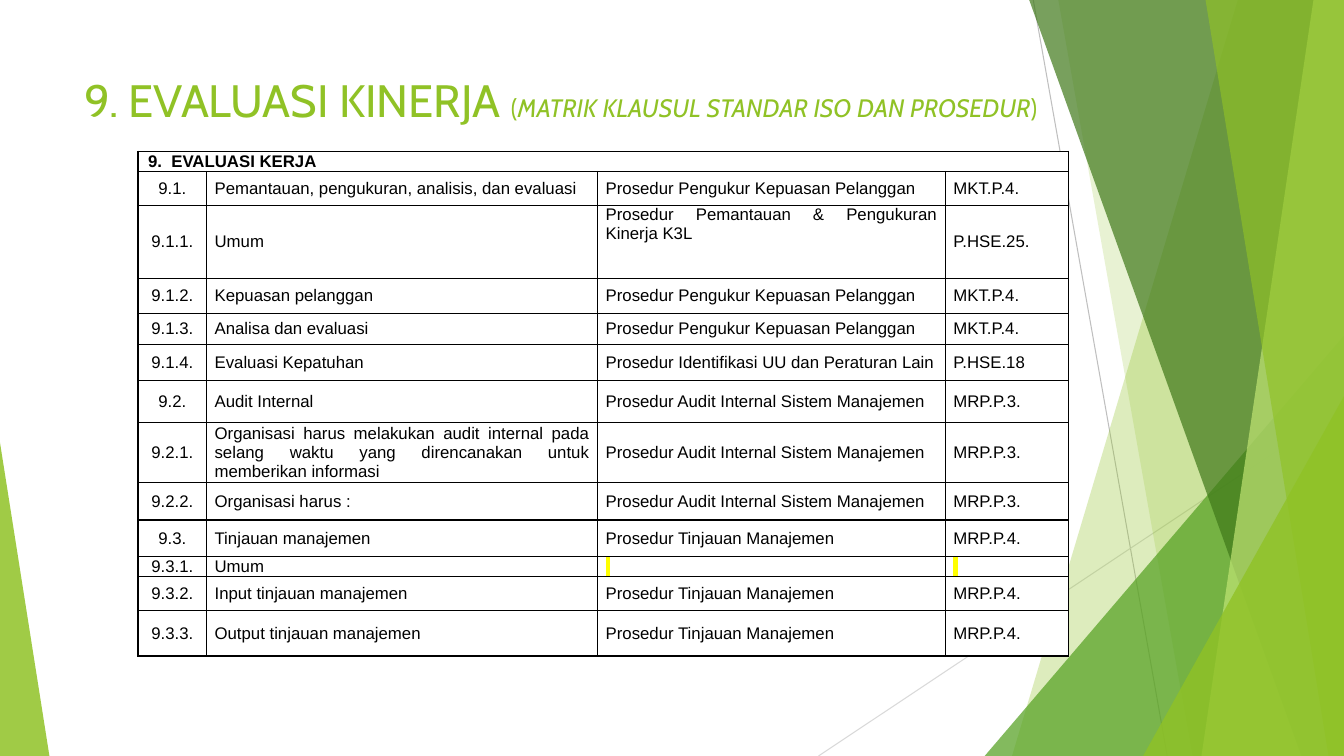
from dataclasses import dataclass
from typing import Any, Optional

from lxml.etree import SubElement
from pptx import Presentation
from pptx.dml.color import RGBColor
from pptx.enum.shapes import MSO_CONNECTOR, MSO_SHAPE
from pptx.enum.text import MSO_ANCHOR, PP_ALIGN
from pptx.oxml.ns import qn
from pptx.shapes.autoshape import Shape
from pptx.slide import Slide
from pptx.table import _Cell
from pptx.text.text import _Run
from pptx.util import Emu, Inches, Pt

SLIDE_WIDTH, SLIDE_HEIGHT = Inches(13.333), Inches(7.5)
NO_BREAK_SPACE = chr(160)


@dataclass(frozen=True)
class Theme:
    lime: str = "90C226"
    pale_lime: str = "C0E474"
    green: str = "54A021"
    dark_green: str = "3F7819"
    gray: str = "BFBFBF"
    light_gray: str = "D9D9D9"
    black: str = "000000"
    white: str = "FFFFFF"
    marker: str = "FFFF00"
    title_font: str = "Cabin"
    table_font: str = "Arial"
    title_size: float = 32.4
    subtitle_size: float = 18
    table_size: float = 12
    ray_width: float = 0.75
    border_width: float = 1


THEME = Theme()


# Positions and sizes below are percentages of the slide's width and height.
@dataclass(frozen=True)
class Ray:
    start: tuple[float, float]
    end: tuple[float, float]
    color: str


@dataclass(frozen=True)
class Band:
    """A full-height facet reaching from its slanted left edge to the slide's right edge."""
    top_x: float
    bottom_x: float
    color: str
    opacity: int


@dataclass(frozen=True)
class Wedge:
    """A right triangle standing on the slide's bottom edge."""
    left: float
    top: float
    width: float
    apex: float
    color: str
    opacity: int


@dataclass(frozen=True)
class Clause:
    height: float
    number: str
    topic: str = ""
    procedure: str = ""
    code: str = ""
    procedure_anchor: MSO_ANCHOR = MSO_ANCHOR.MIDDLE


RAYS = (
    Ray((76.88, 0), (86.85, 100), THEME.gray),
    Ray((100, 53.73), (60.9, 100), THEME.light_gray),
)
FACETS = (
    Band(92.1, 75.3, THEME.lime, 30),
    Band(78.75, 88.73, THEME.lime, 20),
    Wedge(73.27, 44.4, 26.73, 1, THEME.green, 72),
    Band(76.58, 96.83, THEME.dark_green, 70),
    Band(97.73, 89.4, THEME.pale_lime, 70),
    Band(89.7, 98.85, THEME.lime, 65),
    Wedge(85.05, 52.4, 14.95, 1, THEME.lime, 80),
    Wedge(0, 58.53, 3.68, 0, THEME.lime, 85),
)
COLUMN_WIDTHS = (5.1, 29.1, 25.87, 9.15)
SATISFACTION = "Prosedur Pengukur Kepuasan Pelanggan"
AUDIT = "Prosedur Audit Internal Sistem Manajemen"
REVIEW = "Prosedur Tinjauan Manajemen"
CLAUSES = (
    Clause(2.53, "9.  EVALUASI KERJA"),
    Clause(4.53, "9.1.", "Pemantauan, pengukuran, analisis, dan evaluasi", SATISFACTION, "MKT.P.4."),
    Clause(9.6, "9.1.1.", "Umum", "Prosedur Pemantauan & Pengukuran Kinerja K3L", "P.HSE.25.",
           MSO_ANCHOR.TOP),
    Clause(4.67, "9.1.2.", "Kepuasan pelanggan", SATISFACTION, "MKT.P.4."),
    Clause(4.13, "9.1.3.", "Analisa dan evaluasi", SATISFACTION, "MKT.P.4."),
    Clause(4.8, "9.1.4.", "Evaluasi Kepatuhan", "Prosedur Identifikasi UU dan Peraturan Lain", "P.HSE.18"),
    Clause(5.47, "9.2.", "Audit Internal", AUDIT, "MRP.P.3."),
    Clause(7.47, "9.2.1.", "Organisasi harus melakukan audit internal pada selang waktu yang "
           "direncanakan untuk memberikan informasi", AUDIT, "MRP.P.3."),
    Clause(4.93, "9.2.2.", "Organisasi harus :", AUDIT, "MRP.P.3."),
    Clause(4.8, "9.3.", "Tinjauan manajemen", REVIEW, "MRP.P.4."),
    Clause(2.53, "9.3.1.", "Umum", NO_BREAK_SPACE, NO_BREAK_SPACE),
    Clause(4.53, "9.3.2.", "Input tinjauan manajemen", REVIEW, "MRP.P.4."),
    Clause(6, "9.3.3.", "Output tinjauan manajemen", REVIEW, "MRP.P.4."),
)


def across(share: float) -> Emu:
    return Emu(round(SLIDE_WIDTH * share / 100))


def down(share: float) -> Emu:
    return Emu(round(SLIDE_HEIGHT * share / 100))


def apply_format(target: Any, values: dict[str, Any]) -> None:
    for name, value in values.items():
        setattr(target, name, value)


def format_run(run: _Run, color: str, values: dict[str, Any], highlight: Optional[str] = None) -> None:
    run.font.color.rgb = RGBColor.from_string(color)
    if highlight:
        marker = SubElement(run.font._element, qn("a:highlight"))
        SubElement(marker, qn("a:srgbClr"), val=highlight)
    apply_format(run.font, values)


def draw_ray(slide: Slide, ray: Ray) -> None:
    (start_x, start_y), (end_x, end_y) = ray.start, ray.end
    connector = slide.shapes.add_connector(
        MSO_CONNECTOR.STRAIGHT, across(start_x), down(start_y), across(end_x), down(end_y))
    connector.line.color.rgb = RGBColor.from_string(ray.color)
    connector.line.width = Pt(THEME.ray_width)
    SubElement(connector._element.spPr, qn("a:effectLst"))


def add_band(slide: Slide, band: Band) -> Shape:
    builder = slide.shapes.build_freeform(across(band.top_x), 0)
    builder.add_line_segments(
        [(SLIDE_WIDTH, 0), (SLIDE_WIDTH, SLIDE_HEIGHT), (across(band.bottom_x), SLIDE_HEIGHT)], close=True)
    return builder.convert_to_shape()


def add_wedge(slide: Slide, wedge: Wedge) -> Shape:
    shape = slide.shapes.add_shape(MSO_SHAPE.ISOSCELES_TRIANGLE, across(wedge.left), down(wedge.top),
                                   across(wedge.width), down(100 - wedge.top))
    shape.adjustments[0] = wedge.apex
    return shape


def draw_facet(slide: Slide, facet: Band | Wedge) -> None:
    shape = add_band(slide, facet) if isinstance(facet, Band) else add_wedge(slide, facet)
    shape.shadow.inherit = False
    shape.line.fill.background()
    shape.fill.solid()
    shape.fill.fore_color.rgb = RGBColor.from_string(facet.color)
    color_element = shape._element.spPr.find(f"{qn('a:solidFill')}/{qn('a:srgbClr')}")
    SubElement(color_element, qn("a:alpha"), val=str(facet.opacity * 1000))


def draw_title(slide: Slide) -> None:
    frame = slide.shapes.add_textbox(across(5.55), down(8.93), across(76.28), down(11.07)).text_frame
    apply_format(frame, {"word_wrap": True, "vertical_anchor": MSO_ANCHOR.TOP})
    for text, size, italic in (
        ("9. EVALUASI KINERJA ", THEME.title_size, False),
        ("(", THEME.subtitle_size, False),
        ("MATRIK KLAUSUL STANDAR ISO DAN PROSEDUR", THEME.subtitle_size, True),
        (")", THEME.subtitle_size, False),
    ):
        run = frame.paragraphs[0].add_run()
        run.text = text
        format_run(run, THEME.lime, {"name": THEME.title_font, "size": Pt(size), "italic": italic})


def style_cell(cell: _Cell, margin: float, anchor: MSO_ANCHOR) -> None:
    apply_format(cell, {"margin_left": across(margin), "margin_right": across(margin),
                        "margin_top": 0, "margin_bottom": 0, "vertical_anchor": anchor})
    properties = cell._tc.get_or_add_tcPr()
    for side in ("lnL", "lnR", "lnT", "lnB"):
        border = SubElement(properties, qn(f"a:{side}"), w=str(Pt(THEME.border_width)))
        SubElement(SubElement(border, qn("a:solidFill")), qn("a:srgbClr"), val=THEME.black)
    cell.fill.solid()
    cell.fill.fore_color.rgb = RGBColor.from_string(THEME.white)


def draw_clause_table(slide: Slide) -> None:
    table = slide.shapes.add_table(
        len(CLAUSES), len(COLUMN_WIDTHS), across(10.27), down(20), across(sum(COLUMN_WIDTHS)),
        down(sum(clause.height for clause in CLAUSES))).table
    apply_format(table, {"first_row": False, "horz_banding": False})
    for column, width in zip(table.columns, COLUMN_WIDTHS):
        column.width = across(width)
    table.cell(0, 0).merge(table.cell(0, len(COLUMN_WIDTHS) - 1))
    for row_index, (row, clause) in enumerate(zip(table.rows, CLAUSES)):
        row.height = down(clause.height)
        is_heading = row_index == 0
        texts = (clause.number, clause.topic, clause.procedure, clause.code)
        for column_index, (cell, text) in enumerate(zip(row.cells, texts)):
            anchor = clause.procedure_anchor if column_index == 2 else MSO_ANCHOR.MIDDLE
            style_cell(cell, 0.75 if is_heading else 0.6, anchor)
            if not text:
                continue
            paragraph = cell.text_frame.paragraphs[0]
            is_number = column_index == 0 and not is_heading
            paragraph.alignment = PP_ALIGN.CENTER if is_number else PP_ALIGN.JUSTIFY
            run = paragraph.add_run()
            run.text = text
            format_run(run, THEME.black, {"name": THEME.table_font, "size": Pt(THEME.table_size),
                                          "bold": is_heading},
                       THEME.marker if text == NO_BREAK_SPACE else None)


def main() -> None:
    presentation = Presentation()
    apply_format(presentation, {"slide_width": SLIDE_WIDTH, "slide_height": SLIDE_HEIGHT})
    slide = presentation.slides.add_slide(presentation.slide_layouts[6])
    for ray in RAYS:
        draw_ray(slide, ray)
    for facet in FACETS:
        draw_facet(slide, facet)
    draw_title(slide)
    draw_clause_table(slide)
    presentation.save("out.pptx")


if __name__ == "__main__":
    main()
